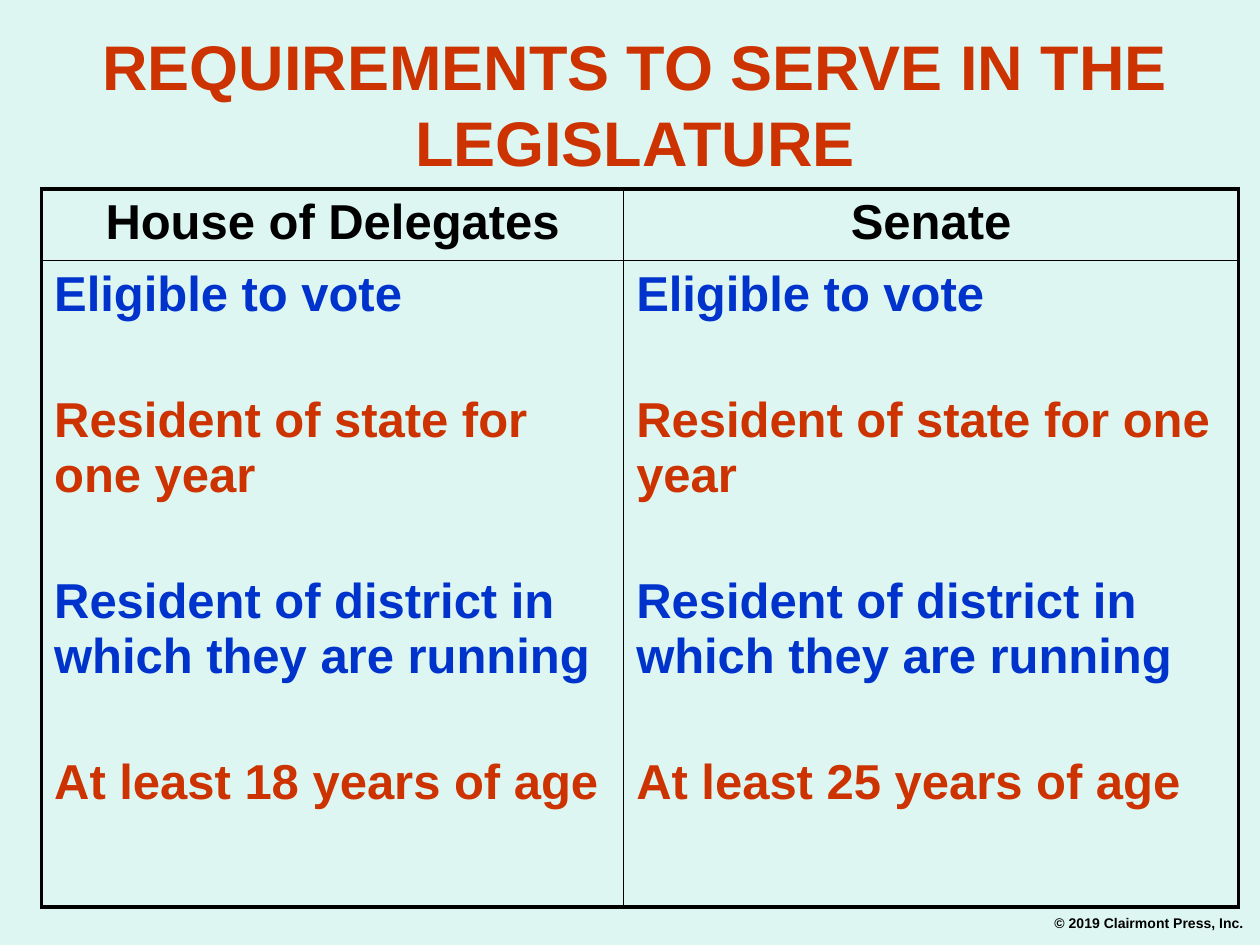
from lxml import etree
from pptx import Presentation, util as u
from pptx.dml.color import RGBColor
from pptx.enum import text
from pptx.oxml.ns import qn

BACKGROUND = RGBColor(0xDE, 0xF6, 0xF1)
BLACK = RGBColor(0x00, 0x00, 0x00)
RED = RGBColor(0xCC, 0x33, 0x00)
BLUE = RGBColor(0x00, 0x33, 0xCC)
OUTER, INNER = 2.25, 1
CENTER = text.PP_ALIGN.CENTER
LEFT = text.PP_ALIGN.LEFT


class SlideBuilder:
    font = {"name": "Arial", "bold": True}

    def __init__(self, slide):
        self.slide = slide
        fill = slide.background.fill
        fill.solid()
        fill.fore_color.rgb = BACKGROUND

    def fill_text(self, frame, lines, size, align=LEFT, gap=0):
        """Fill a text frame with (wording, colour) paragraphs."""
        frame.word_wrap = True
        for index, (wording, color) in enumerate(lines):
            para = frame.add_paragraph() if index else frame.paragraphs[0]
            para.alignment = align
            para.space_before = u.Pt(gap if index else 0)
            span = para.add_run()
            span.text = wording
            for key, value in {**self.font, "size": u.Pt(size)}.items():
                setattr(span.font, key, value)
            span.font.color.rgb = color

    def title(self, wording, left, top, width, height):
        box = self.slide.shapes.title
        place = {"left": left, "top": top, "width": width, "height": height}
        for key, value in place.items():
            setattr(box, key, u.Inches(value))
        frame = box.text_frame
        frame.auto_size = text.MSO_AUTO_SIZE.NONE
        frame.vertical_anchor = text.MSO_ANCHOR.MIDDLE
        self.fill_text(frame, [(wording, RED)], 36, CENTER)

    def label(self, wording, left, top, width, height):
        place = [u.Inches(value) for value in (left, top, width, height)]
        box = self.slide.shapes.add_textbox(*place)
        self.fill_text(box.text_frame, [(wording, BLACK)], 8)

    def borders(self, cell, widths):
        properties = cell._tc.get_or_add_tcPr()
        for side, width in widths.items():
            line = etree.SubElement(properties, qn(f"a:ln{side}"), w=str(u.Pt(width)))
            fill = etree.SubElement(line, qn("a:solidFill"))
            etree.SubElement(fill, qn("a:srgbClr"), val=str(BLACK))

    def table(self, rows, left, top, widths, heights):
        """Draw a header row and a body row inside a heavy frame."""
        place = [u.Inches(v) for v in (left, top, sum(widths), sum(heights))]
        table = self.slide.shapes.add_table(len(heights), len(widths), *place).table
        for column, width in zip(table.columns, widths):
            column.width = u.Inches(width)
        last_row, last_column = len(heights) - 1, len(widths) - 1
        for r, height in enumerate(heights):
            table.rows[r].height = u.Inches(height)
            for c, lines in enumerate(rows[r]):
                cell = table.cell(r, c)
                self.borders(cell, {
                    "L": OUTER if c == 0 else INNER,
                    "R": OUTER if c == last_column else INNER,
                    "T": OUTER if r == 0 else INNER,
                    "B": OUTER if r == last_row else INNER,
                })
                cell.fill.background()
                align = LEFT if r else CENTER
                self.fill_text(cell.text_frame, lines, 28, align, gap=41)


def requirements(age):
    return [
        ("Eligible to vote", BLUE),
        ("Resident of state for one year", RED),
        ("Resident of district in which they are running", BLUE),
        (f"At least {age} years of age", RED),
    ]


def main():
    deck = Presentation()
    deck.slide_width, deck.slide_height = u.Inches(10), u.Inches(7.5)
    page = SlideBuilder(deck.slides.add_slide(deck.slide_layouts[5]))
    page.label("© 2019 Clairmont Press, Inc.", 8.27, 7.21, 1.75, 0.24)
    page.title("REQUIREMENTS TO SERVE IN THE LEGISLATURE", 0.5, 0.17, 9.08, 1.3)
    chambers = [[("House of Delegates", BLACK)], [("Senate", BLACK)]]
    limits = [requirements(18), requirements(25)]
    page.table([chambers, limits], 0.33, 1.5, [4.62, 4.88], [0.56, 5.13])
    deck.save("out.pptx")


if __name__ == "__main__":
    main()
